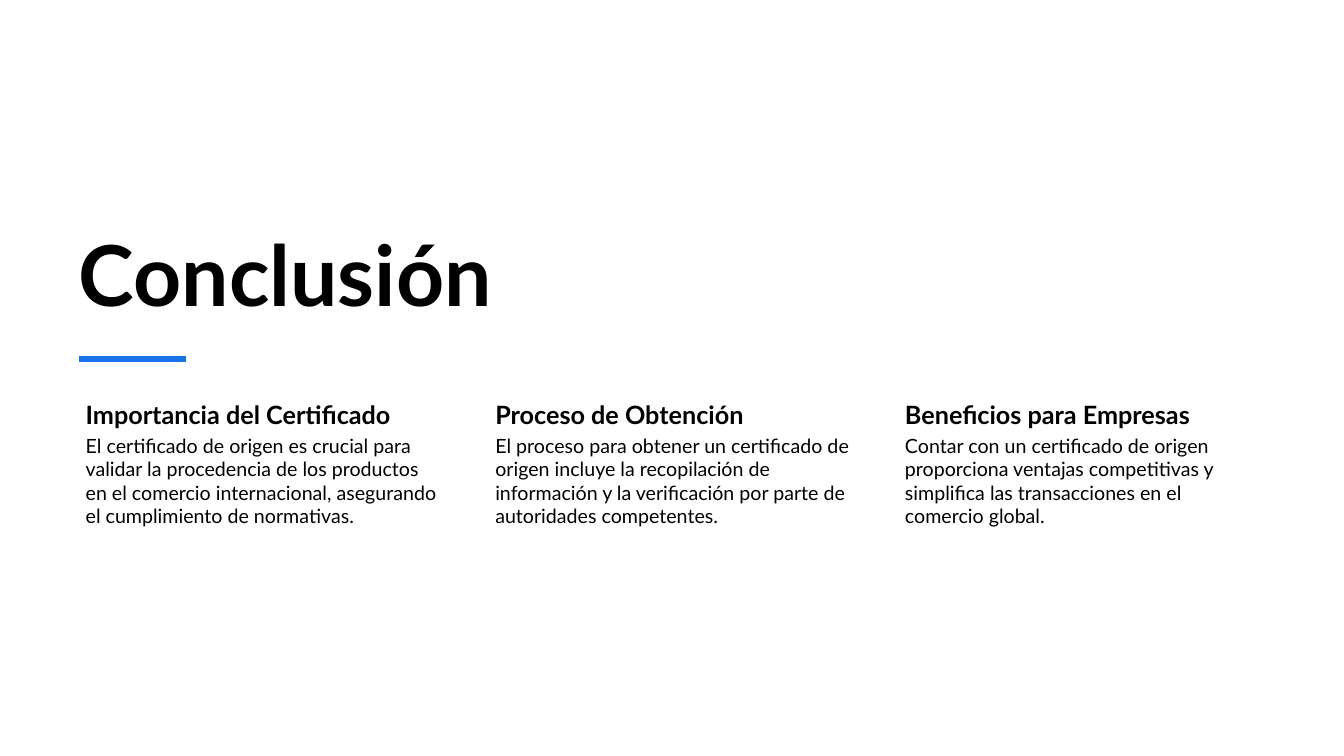
from pptx import Presentation
from pptx.dml.color import RGBColor
from pptx.enum.shapes import MSO_CONNECTOR as Link
from pptx.enum.text import MSO_ANCHOR as Anchor
from pptx.oxml.ns import qn
from pptx.util import Pt
from lxml.etree import SubElement


def tint(code):
    return RGBColor.from_string(code)


class Page:
    """Style and current slide."""
    face = "Lato"
    ink = "000000"
    blue = "1973EB"

    def __init__(self, deck):
        self.slide = deck.slides.add_slide(deck.slide_layouts[6])

    def text(self, words, area, size, bold=False, pads=(0, 0, 0, 0),
             anchor=Anchor.TOP, after=0):
        box = self.slide.shapes.add_textbox(*map(Pt, area))
        frame = box.text_frame
        left, top, right, base = map(Pt, pads)
        style = {"word_wrap": True, "vertical_anchor": anchor,
                 "margin_left": left, "margin_top": top,
                 "margin_right": right, "margin_bottom": base}
        for name, value in style.items():
            setattr(frame, name, value)
        para = frame.paragraphs[0]
        para.space_after = Pt(after)
        run = para.add_run()
        run.text = words
        for name, value in {"name": self.face, "size": Pt(size), "bold": bold}.items():
            setattr(run.font, name, value)
        run.font.color.rgb = tint(self.ink)

    def line(self, start, end, width):
        link = self.slide.shapes.add_connector(
            Link.STRAIGHT, *map(Pt, start + end))
        link.line.color.rgb = tint(self.blue)
        link.line.width = Pt(width)
        SubElement(link._element.spPr, qn("a:effectLst"))


POINTS = [
    ("Importancia del Certificado",
     "El certificado de origen es crucial para validar la procedencia de los "
     "productos en el comercio internacional, asegurando el cumplimiento de "
     "normativas."),
    ("Proceso de Obtención",
     "El proceso para obtener un certificado de origen incluye la recopilación "
     "de información y la verificación por parte de autoridades competentes."),
    ("Beneficios para Empresas",
     "Contar con un certificado de origen proporciona ventajas competitivas y "
     "simplifica las transacciones en el comercio global."),
]
LEFT, STEP, WIDE = 50.4, 292.6, 265.7
HEAD, BODY = 283, 308.2


def main():
    deck = Presentation()
    deck.slide_width, deck.slide_height = Pt(960), Pt(540)
    page = Page(deck)

    # Title and accent rule
    page.text("Conclusión", (LEFT, 123.8, 643, 110.9), 60, True,
              (6, 3.6, 6, 3.6), Anchor.BOTTOM)
    page.line((56.2, 256.3), (133.2, 256.3), 4.5)

    # Three columns
    for col, (head, body) in enumerate(POINTS):
        x = LEFT + col * STEP
        page.text(head, (x, HEAD, WIDE, BODY - HEAD), 18, True,
                  (10.8, 2, 2, 2), after=6.3)
        page.text(body, (x, BODY, WIDE, 168.5), 14,
                  pads=(10.8, 1.4, 1.4, 1.4), after=4.9)

    deck.save("out.pptx")


if __name__ == "__main__":
    main()
